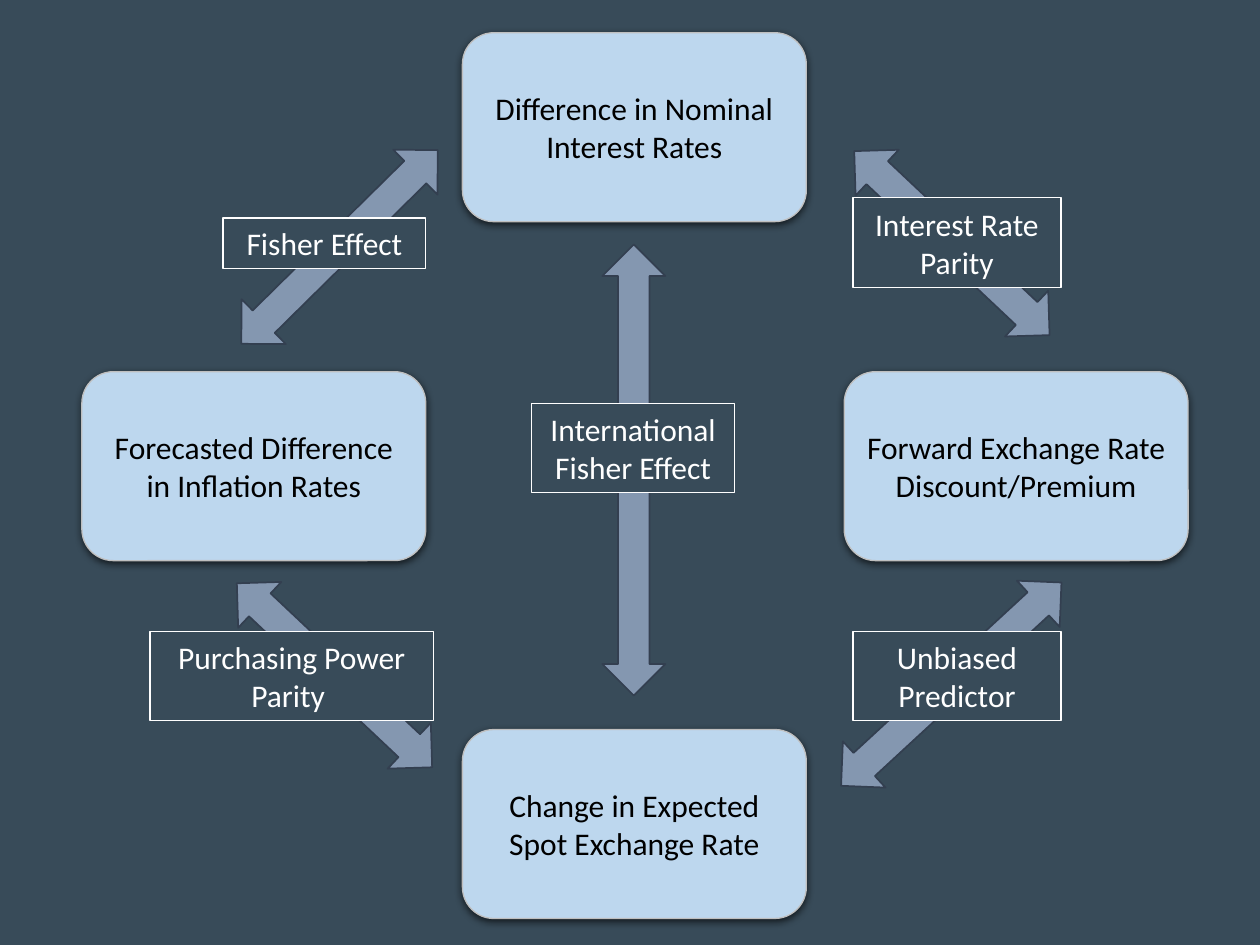
"""Build a slide relating interest, inflation and exchange rates."""
import lxml.etree
import pptx
import pptx.dml.color
import pptx.enum.shapes
import pptx.enum.text
import pptx.oxml.ns
import pptx.util

Inches = pptx.util.Inches
Pt = pptx.util.Pt
RGBColor = pptx.dml.color.RGBColor
MSO_SHAPE = pptx.enum.shapes.MSO_SHAPE
qn = pptx.oxml.ns.qn

SLATE = RGBColor(0x38, 0x4B, 0x59)
PALE_BLUE = RGBColor(0xBD, 0xD7, 0xEE)
GREY = RGBColor(0xBF, 0xBF, 0xBF)
ARROW_BLUE = RGBColor(0x84, 0x97, 0xB0)
NAVY = RGBColor(0x33, 0x3F, 0x50)
BLACK = RGBColor(0, 0, 0)
WHITE = RGBColor(0xFF, 0xFF, 0xFF)

BOX_W, BOX_H = 2.73, 1.5
ARROW_H = 0.5
LABEL_X = 6.77
LABEL_W = 1.65
LABEL_H = 0.71

BOXES = [
    (0.65, 2.95, "Forecasted Difference in Inflation Rates"),
    (3.67, 5.79, "Change in Expected Spot Exchange Rate"),
    (6.7, 2.95, "Forward Exchange Rate Discount/Premium"),
    (3.67, 0.26, "Difference in Nominal Interest Rates"),
]
ARROWS = [
    (1.6, 1.71, 2.19, 315.4),
    (6.36, 5.18, 2.38, 317.3),
    (6.49, 1.68, 2.13, 43.3),
    (1.59, 5.11, 2.13, 43.3),
    (3.24, 3.48, 3.58, 90),
]
LABELS = [
    (1.19, 5.01, 2.25, LABEL_H, ["Purchasing Power", "Parity "]),
    (1.77, 1.73, 1.61, 0.4, ["Fisher Effect"]),
    (LABEL_X, 1.57, LABEL_W, LABEL_H, ["Interest Rate", "Parity"]),
    (LABEL_X, 5.01, LABEL_W, LABEL_H, ["Unbiased", "Predictor"]),
    (4.22, 3.2, 1.61, LABEL_H, ["International", "Fisher Effect"]),
]


def add_shape(s, kind, x, y, w, h, fill, line, line_width):
    """Add a filled, outlined shape without a shadow."""
    sp = s.shapes.add_shape(kind, Inches(x), Inches(y), Inches(w), Inches(h))
    sp.shadow.inherit = False
    sp.fill.solid()
    sp.fill.fore_color.rgb = fill
    sp.line.color.rgb = line
    sp.line.width = Pt(line_width)
    return sp


def add_text(sp, lines, color):
    """Write centred paragraphs into a shape."""
    tf = sp.text_frame
    tf.word_wrap = True
    tf.vertical_anchor = pptx.enum.text.MSO_ANCHOR.MIDDLE
    for i, line in enumerate(lines):
        p = tf.add_paragraph() if i else tf.paragraphs[0]
        p.alignment = pptx.enum.text.PP_ALIGN.CENTER
        r = p.add_run()
        r.text = line
        r.font.name = "Calibri"
        r.font.size = Pt(18)
        r.font.color.rgb = color


def add_shadow(sp):
    """Give a shape a soft black shadow falling straight down."""
    effects = sp._element.spPr.find(qn("a:effectLst"))
    shadow = lxml.etree.SubElement(
        effects, qn("a:outerShdw"), blurRad=str(Pt(4.5)), dist=str(Pt(1.5)),
        dir="5400000", algn="ctr", rotWithShape="0")
    color = lxml.etree.SubElement(shadow, qn("a:srgbClr"), val=str(BLACK))
    lxml.etree.SubElement(color, qn("a:alpha"), val="63000")


def add_box(s, x, y, text):
    """Add a rounded box naming one rate."""
    sp = add_shape(s, MSO_SHAPE.ROUNDED_RECTANGLE, x, y, BOX_W, BOX_H,
                   PALE_BLUE, GREY, 0.75)
    add_shadow(sp)
    add_text(sp, [text], BLACK)


def add_arrow(s, x, y, length, rotation):
    """Add a rotated double-headed arrow."""
    sp = add_shape(s, MSO_SHAPE.LEFT_RIGHT_ARROW, x, y, length, ARROW_H,
                   ARROW_BLUE, NAVY, 1)
    sp.rotation = rotation


def add_label(s, x, y, w, h, lines):
    """Add a framed label naming one relationship."""
    sp = add_shape(s, MSO_SHAPE.RECTANGLE, x, y, w, h, SLATE, WHITE, 0.75)
    add_text(sp, lines, WHITE)


def main():
    """Build and save the slide."""
    prs = pptx.Presentation()
    prs.slide_width, prs.slide_height = Inches(10), Inches(7.5)
    s = prs.slides.add_slide(prs.slide_layouts[6])
    s.background.fill.solid()
    s.background.fill.fore_color.rgb = SLATE
    for box in BOXES:
        add_box(s, *box)
    for arrow in ARROWS:
        add_arrow(s, *arrow)
    for label in LABELS:
        add_label(s, *label)
    prs.save("out.pptx")


if __name__ == "__main__":
    main()
